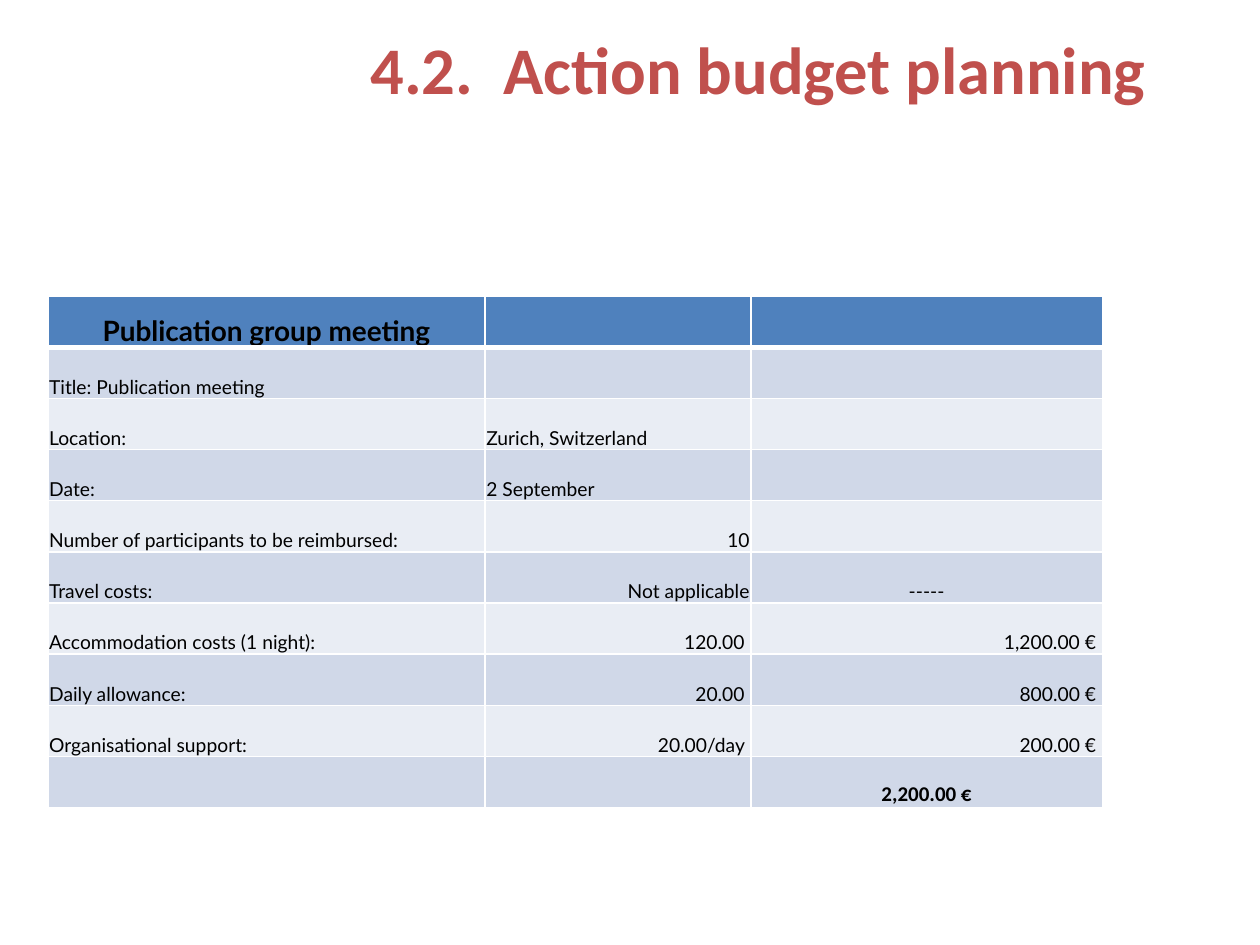
from lxml.etree import SubElement
from pptx import Presentation
from pptx.dml.color import RGBColor
from pptx.enum.text import MSO_ANCHOR, PP_ALIGN
from pptx.oxml.ns import qn
from pptx.util import Inches, Pt

RED = RGBColor(0xC0, 0x50, 0x4D)
BLACK = RGBColor(0, 0, 0)
HEADER_BLUE = RGBColor(0x4F, 0x81, 0xBD)
BAND_DARK = RGBColor(0xD0, 0xD8, 0xE8)
BAND_LIGHT = RGBColor(0xE9, 0xED, 0xF4)
WHITE = RGBColor(0xFF, 0xFF, 0xFF)

LEFT, CENTER, RIGHT = PP_ALIGN.LEFT, PP_ALIGN.CENTER, PP_ALIGN.RIGHT

TITLE = "4.2.  Action budget planning"
COLUMN_WIDTHS = [3.47, 2.11, 2.79]
BUDGET = [
    ("Publication group meeting", "", ""),
    ("Title: Publication meeting", "", ""),
    ("Location:", "Zurich, Switzerland", ""),
    ("Date:", "2 September", ""),
    ("Number of participants to be reimbursed:", "10", ""),
    ("Travel costs:", "Not applicable", "-----"),
    ("Accommodation costs (1 night):", " 120.00 ", " 1,200.00 € "),
    ("Daily allowance:", " 20.00 ", " 800.00 € "),
    ("Organisational support:", " 20.00/day ", " 200.00 € "),
    ("", "", " 2,200.00 € "),
]
TOTAL_ROW = len(BUDGET) - 1
FIRST_NUMBER_ROW = 4


def text_style(row, column):
    """Return alignment, font name, size and boldness of a cell."""
    if row == 0:
        return CENTER, "Lato", 16, True
    if row == TOTAL_ROW:
        return CENTER, "Calibri", 12, True
    if BUDGET[row][column] == "-----":
        return CENTER, "Lato", 11, False
    is_number = column > 0 and row >= FIRST_NUMBER_ROW
    return RIGHT if is_number else LEFT, "Lato", 11, False


def set_borders(cell, bottom_width, top_width):
    properties = cell._tc.get_or_add_tcPr()
    widths = {"a:lnL": 1, "a:lnR": 1, "a:lnT": top_width, "a:lnB": bottom_width}
    for tag, width in widths.items():
        line = SubElement(properties, qn(tag), w=str(Pt(width)))
        fill = SubElement(line, qn("a:solidFill"))
        SubElement(fill, qn("a:srgbClr"), val=str(WHITE))


def format_font(font, name, size, bold, color):
    font.name, font.size, font.bold = name, Pt(size), bold
    font.color.rgb = color


def fill_cell(cell, row, column):
    set_borders(cell, 3 if row == 0 else 1, 3 if row == 1 else 1)
    cell.fill.solid()
    band = BAND_DARK if row % 2 else BAND_LIGHT
    cell.fill.fore_color.rgb = HEADER_BLUE if row == 0 else band
    text = BUDGET[row][column]
    if not text:
        return
    cell.vertical_anchor = MSO_ANCHOR.BOTTOM
    cell.margin_left = cell.margin_right = cell.margin_top = Inches(0.01)
    cell.margin_bottom = 0
    alignment, name, size, bold = text_style(row, column)
    paragraph = cell.text_frame.paragraphs[0]
    paragraph.text = text
    paragraph.alignment = alignment
    format_font(paragraph.runs[0].font, name, size, bold, BLACK)


def add_title(slide):
    title = slide.shapes.title
    title.left, title.top = Inches(1.83), Inches(0.17)
    title.width, title.height = Inches(7.37), Inches(0.74)
    frame = title.text_frame
    frame.text = TITLE
    frame.word_wrap = True
    frame.vertical_anchor = MSO_ANCHOR.MIDDLE
    paragraph = frame.paragraphs[0]
    paragraph.alignment = RIGHT
    format_font(paragraph.runs[0].font, "Calibri", 38, True, RED)


def add_budget_table(slide):
    table = slide.shapes.add_table(
        len(BUDGET), len(COLUMN_WIDTHS),
        Inches(0.38), Inches(2.35), Inches(sum(COLUMN_WIDTHS)), Inches(4.06),
    ).table
    for column, width in enumerate(COLUMN_WIDTHS):
        table.columns[column].width = Inches(width)
        for row in range(len(BUDGET)):
            fill_cell(table.cell(row, column), row, column)


def main():
    presentation = Presentation()
    presentation.slide_width, presentation.slide_height = Inches(10), Inches(7.5)
    slide = presentation.slides.add_slide(presentation.slide_layouts[5])
    add_title(slide)
    add_budget_table(slide)
    presentation.save("out.pptx")


if __name__ == "__main__":
    main()
